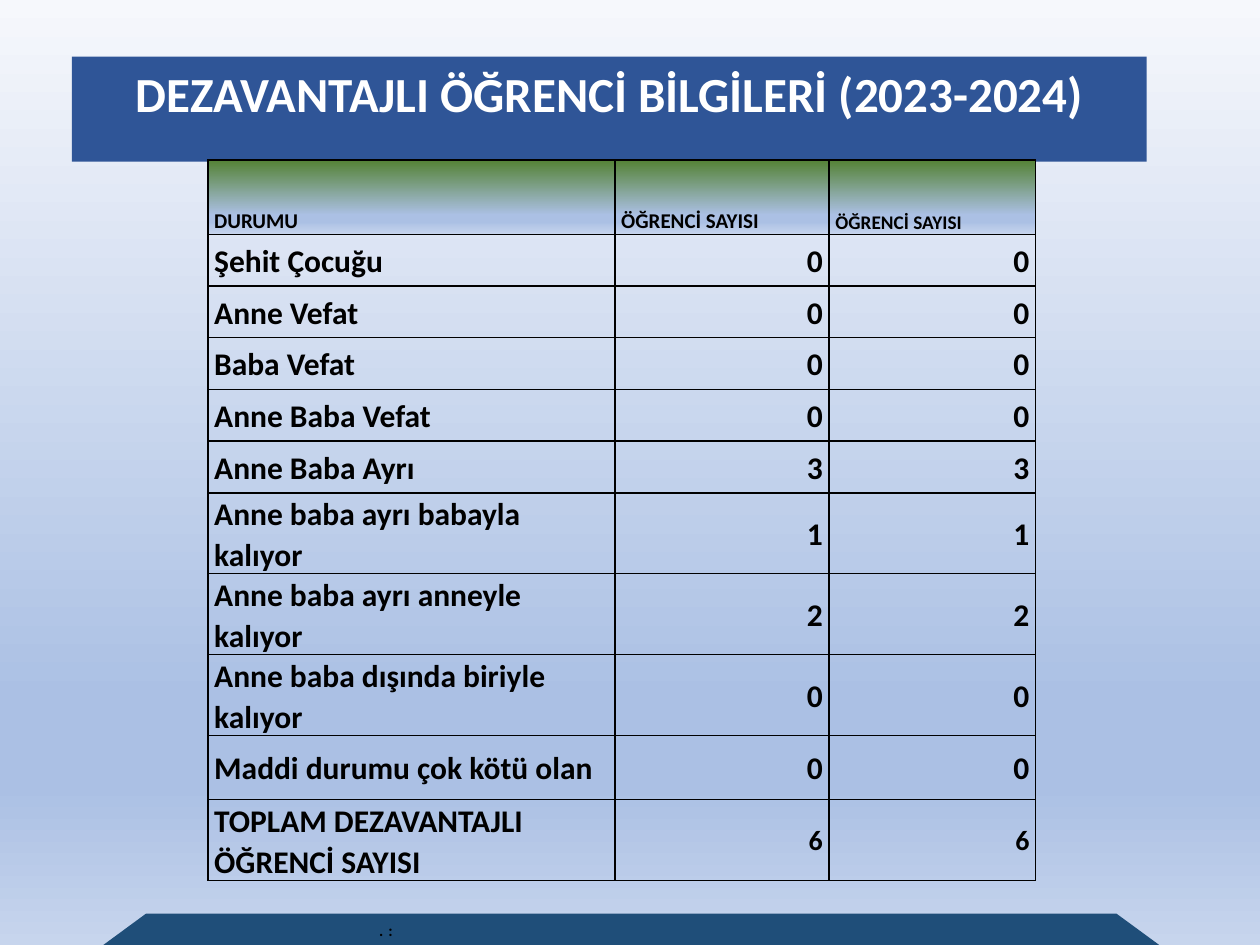
from lxml.etree import SubElement
from pptx import Presentation
from pptx.dml.color import RGBColor
from pptx.enum.shapes import MSO_SHAPE
from pptx.enum.text import MSO_ANCHOR, MSO_AUTO_SIZE, PP_ALIGN
from pptx.oxml.ns import qn
from pptx.util import Inches, Pt

HUES = {"navy": "1F4E79", "blue": "2F5597", "white": "FFFFFF", "black": "000000",
        "pale": "F6F8FC", "green": "548235", "sky": "ABC0E4", "mist": "C7D5ED"}
WIDE, HIGH = Inches(10), Inches(7.5)

HEAD = ["DURUMU", "ÖĞRENCİ SAYISI", "ÖĞRENCİ SAYISI"]
ROWS = [
    ("Şehit Çocuğu", 0), ("Anne Vefat", 0), ("Baba Vefat", 0),
    ("Anne Baba Vefat", 0), ("Anne Baba Ayrı", 3),
    ("Anne baba ayrı babayla kalıyor", 1),
    ("Anne baba ayrı anneyle kalıyor", 2),
    ("Anne baba dışında biriyle kalıyor", 0),
    ("Maddi durumu çok kötü olan", 0),
    ("TOPLAM DEZAVANTAJLI ÖĞRENCİ SAYISI", 6),
]
COLS = [32.3, 17, 16.4]
TALL = [7.87] + [5.47] * 5 + [5.73, 5.47, 5.2, 6.8, 6.8]


def tint(name):
    return RGBColor.from_string(HUES[name])


def solid(node, name):
    fill = SubElement(node, qn("a:solidFill"))
    SubElement(fill, qn("a:srgbClr"), val=HUES[name])


def fade(node, top):
    """Add a downward gradient from the top colour to the shared blues."""
    grad = SubElement(node, qn("a:gradFill"), rotWithShape="1")
    stops = SubElement(grad, qn("a:gsLst"))
    for share, name in [(0, top), (74, "sky"), (83, "sky"), (100, "mist")]:
        stop = SubElement(stops, qn("a:gs"), pos=str(share * 1000))
        SubElement(stop, qn("a:srgbClr"), val=HUES[name])
    SubElement(grad, qn("a:lin"), ang="5400000", scaled="0")
    return grad


class Deck:
    """Style and current slide; lengths are percent of slide width and height."""
    font = "Calibri"

    def __init__(self):
        self.file = Presentation()
        self.file.slide_width, self.file.slide_height = WIDE, HIGH
        self.slide = self.file.slides.add_slide(self.file.slide_layouts[5])

    def across(self, share):
        return int(WIDE * share / 100)

    def down(self, share):
        return int(HIGH * share / 100)

    def box(self, x, y, w, h):
        return self.across(x), self.down(y), self.across(w), self.down(h)

    def ground(self, top):
        fill = self.slide.background.fill
        fill.solid()
        props = self.slide.element.cSld.find(qn("p:bg")).find(qn("p:bgPr"))
        props.replace(props.find(qn("a:solidFill")), fade(props, top))

    def words(self, para, text, size, hue="black"):
        run = para.add_run()
        run.text = text
        run.font.name, run.font.size, run.font.bold = self.font, Pt(size), True
        run.font.color.rgb = tint(hue)
        return run

    def title(self, text, area, size):
        shape = self.slide.shapes.title
        shape.left, shape.top, shape.width, shape.height = self.box(*area)
        shape.fill.solid()
        shape.fill.fore_color.rgb = tint("blue")
        frame = shape.text_frame
        frame.auto_size = MSO_AUTO_SIZE.SHAPE_TO_FIT_TEXT
        frame.vertical_anchor = MSO_ANCHOR.TOP
        para = frame.paragraphs[0]
        para.alignment = PP_ALIGN.CENTER
        self.words(para, text, size, "white")

    def base(self, area, slant):
        shape = self.slide.shapes.add_shape(MSO_SHAPE.TRAPEZOID, *self.box(*area))
        shape.adjustments[0] = slant
        shape.shadow.inherit = False
        shape.fill.solid()
        shape.fill.fore_color.rgb = tint("navy")
        shape.line.fill.background()

    def label(self, text, area, size, gap):
        frame = self.slide.shapes.add_textbox(*self.box(*area)).text_frame
        frame.word_wrap = False
        frame.auto_size = MSO_AUTO_SIZE.SHAPE_TO_FIT_TEXT
        run = self.words(frame.paragraphs[0], text, size)
        run._r.get_or_add_rPr().set("spc", str(gap * 100))

    def cell(self, cell, text, size, head, right):
        cell.margin_left = cell.margin_right = Inches(0.05)
        cell.margin_top = cell.margin_bottom = 0
        cell.vertical_anchor = MSO_ANCHOR.BOTTOM if head else MSO_ANCHOR.MIDDLE
        para = cell.text_frame.paragraphs[0]
        para.line_spacing = 1.07
        para.alignment = PP_ALIGN.RIGHT if right else PP_ALIGN.LEFT
        self.words(para, text, size)
        props = cell._tc.get_or_add_tcPr()
        for side in ("lnL", "lnR", "lnT", "lnB"):
            solid(SubElement(props, qn(f"a:{side}"), w=str(int(Pt(1)))), "black")
        if head:
            fade(props, "green")
        else:
            SubElement(props, qn("a:noFill"))

    def table(self, x, y):
        area = self.box(x, y, sum(COLS), sum(TALL))
        table = self.slide.shapes.add_table(len(TALL), len(COLS), *area).table
        table.first_row = table.horz_banding = False
        for col, share in zip(table.columns, COLS):
            col.width = self.across(share)
        for row, share in zip(table.rows, TALL):
            row.height = self.down(share)
        for c, (text, size) in enumerate(zip(HEAD, [12, 12, 11])):
            self.cell(table.cell(0, c), text, size, True, False)
        for r, (name, count) in enumerate(ROWS, 1):
            size = 16 if r == len(ROWS) else 18
            self.cell(table.cell(r, 0), name, 18, False, False)
            for c in (1, 2):
                self.cell(table.cell(r, c), str(count), size, False, True)


def main():
    deck = Deck()
    deck.ground("pale")
    deck.base((8.2, 96.67, 83.8, 3.33), 1.364)
    deck.label(".:", (29.1, 96.8, 3.5, 3.33), 9, 3)
    deck.table(16.5, 16.93)
    deck.title("DEZAVANTAJLI ÖĞRENCİ BİLGİLERİ (2023-2024)", (5.7, 6, 85.3, 7.6), 28)
    deck.file.save("out.pptx")


if __name__ == "__main__":
    main()
